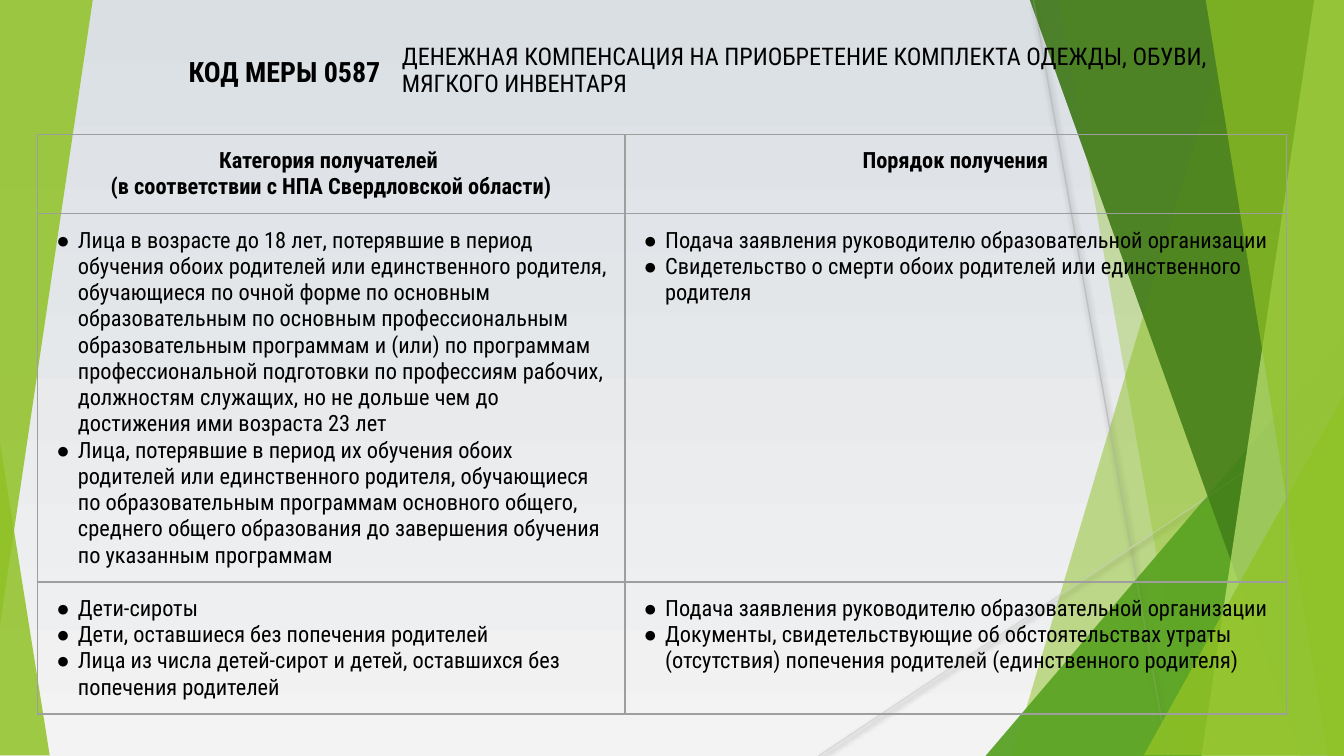
from dataclasses import dataclass

from lxml.etree import SubElement
from pptx import Presentation
from pptx.dml.color import RGBColor
from pptx.enum.shapes import MSO_CONNECTOR as Connector, MSO_SHAPE as Shape
from pptx.enum.text import MSO_ANCHOR as Anchor, PP_ALIGN as Align
from pptx.oxml import parse_xml
from pptx.oxml.ns import nsdecls, qn
from pptx.util import Inches, Pt


@dataclass(frozen=True)
class Theme:
    font: str = "Roboto Condensed"
    bullet_font: str = "Arial"
    text: str = "000000"
    lime: str = "90C226"
    green: str = "54A021"
    forest: str = "3F7819"
    pale: str = "C0E474"
    border: str = "9E9E9E"
    sky_top: str = "DADFE4"
    sky_bottom: str = "F3F3F3"
    ray: str = "BFBFBF"
    soft_ray: str = "D9D9D9"
    code_size: int = 15
    title_size: int = 13
    body_size: int = 12
    line_width: float = 0.75


THEME = Theme()
WIDTH = 10
HEIGHT = WIDTH * 9 / 16
TOP = -0.01
APPLICATION = "Подача заявления руководителю образовательной организации"
HEADINGS = [
    ["Категория получателей ", "(в соответствии с НПА Свердловской области)"],
    ["Порядок получения"],
]
MEASURES = [
    [
        [
            "Лица в возрасте до 18 лет, потерявшие в период обучения обоих родителей "
            "или единственного родителя, обучающиеся по очной форме по основным "
            "образовательным по основным профессиональным образовательным программам "
            "и (или) по программам профессиональной подготовки по профессиям рабочих, "
            "должностям служащих, но не дольше чем до достижения ими возраста 23 лет",
            "Лица, потерявшие в период их обучения обоих родителей или единственного "
            "родителя, обучающиеся по образовательным программам основного общего, "
            "среднего общего образования до завершения обучения по указанным программам",
        ],
        [APPLICATION, "Свидетельство о смерти обоих родителей или единственного родителя"],
    ],
    [
        [
            "Дети-сироты",
            "Дети, оставшиеся без попечения родителей",
            "Лица из числа детей-сирот и детей, оставшихся без попечения родителей",
        ],
        [
            APPLICATION,
            "Документы, свидетельствующие об обстоятельствах утраты (отсутствия) "
            "попечения родителей (единственного родителя)",
        ],
    ],
]


def rgb(color):
    return RGBColor.from_string(color)


def paint_background(slide):
    fill = slide.background.fill
    fill.gradient()
    fill.gradient_angle = 270
    for stop, color in zip(fill.gradient_stops, (THEME.sky_top, THEME.sky_bottom)):
        stop.color.rgb = rgb(color)


def paint_glass(shape, color, opacity):
    shape.shadow.inherit = False
    shape.fill.solid()
    shape.fill.fore_color.rgb = rgb(color)
    shape.line.fill.background()
    tint = shape.element.spPr.find(qn("a:solidFill")).find(qn("a:srgbClr"))
    SubElement(tint, qn("a:alpha"), val=str(opacity * 1000))


def add_beam(slide, top_x, bottom_x, color, opacity):
    corners = [(WIDTH, TOP), (WIDTH, HEIGHT), (bottom_x, HEIGHT)]
    outline = slide.shapes.build_freeform(Inches(top_x), Inches(TOP))
    outline.add_line_segments([(Inches(x), Inches(y)) for x, y in corners])
    paint_glass(outline.convert_to_shape(), color, opacity)


def add_wedge(slide, box, apex, color, opacity, rotation=0):
    wedge = slide.shapes.add_shape(Shape.ISOSCELES_TRIANGLE, *map(Inches, box))
    wedge.adjustments[0] = apex
    wedge.rotation = rotation
    paint_glass(wedge, color, opacity)


def add_ray(slide, start, end, color):
    ray = slide.shapes.add_connector(Connector.STRAIGHT, *map(Inches, start + end))
    ray.line.color.rgb = rgb(color)
    ray.line.width = Pt(THEME.line_width)
    ray.element.spPr.append(parse_xml(
        f'<a:effectLst {nsdecls("a")}>'
        f'<a:outerShdw blurRad="{Pt(3.1)}" dist="{Pt(1.6)}" dir="5400000" rotWithShape="0">'
        '<a:srgbClr val="000000"><a:alpha val="38000"/></a:srgbClr>'
        '</a:outerShdw></a:effectLst>'
    ))


def add_facets(slide):
    add_beam(slide, 9.21, 7.53, THEME.lime, 30)
    add_beam(slide, 7.88, 8.87, THEME.lime, 20)
    add_wedge(slide, (7.33, 2.5, 2.67, 3.13), 1, THEME.green, 72)
    add_beam(slide, 7.66, 9.68, THEME.forest, 70)
    add_beam(slide, 9.78, 8.94, THEME.pale, 70)
    add_beam(slide, 8.97, 9.88, THEME.lime, 65)
    add_wedge(slide, (8.51, 2.94, 1.49, 2.68), 1, THEME.lime, 80)


def format_text(paragraph, size, bold=False, align=Align.LEFT):
    paragraph.alignment = align
    for run in paragraph.runs:
        run.font.name = THEME.font
        run.font.size = Pt(size)
        run.font.bold = bold
        run.font.color.rgb = rgb(THEME.text)


def add_bullet(paragraph):
    props = paragraph._p.get_or_add_pPr()
    props.set("marL", str(Inches(0.2)))
    props.set("indent", str(Inches(-0.16)))
    color = SubElement(props, qn("a:buClr"))
    SubElement(color, qn("a:srgbClr"), val=THEME.text)
    SubElement(props, qn("a:buFont"), typeface=THEME.bullet_font)
    SubElement(props, qn("a:buChar"), char="●")


def add_caption(slide, box, text, size, insets, bold=False, align=Align.LEFT, spacing=None):
    frame = slide.shapes.add_textbox(*map(Inches, box)).text_frame
    frame.word_wrap = True
    frame.vertical_anchor = Anchor.MIDDLE
    frame.margin_left = frame.margin_right = Inches(insets[0])
    frame.margin_top = frame.margin_bottom = Inches(insets[1])
    frame.text = text
    caption = frame.paragraphs[0]
    caption.line_spacing = spacing
    format_text(caption, size, bold, align)


def add_borders(cell):
    props = cell._tc.get_or_add_tcPr()
    for position, side in enumerate(("lnL", "lnR", "lnT", "lnB")):
        props.insert(position, parse_xml(
            f'<a:{side} {nsdecls("a")} w="{Pt(THEME.line_width)}">'
            f'<a:solidFill><a:srgbClr val="{THEME.border}"/></a:solidFill></a:{side}>'
        ))


def fill_cell(cell, lines, heading):
    cell.fill.background()
    add_borders(cell)
    cell.margin_left = cell.margin_right = Inches(0.1)
    cell.margin_top = cell.margin_bottom = Inches(0.1)
    cell.text_frame.text = "\n".join(lines)
    for paragraph in cell.text_frame.paragraphs:
        if not heading:
            add_bullet(paragraph)
        format_text(paragraph, THEME.body_size, heading, Align.CENTER if heading else Align.LEFT)


def add_measures_table(slide):
    widths, heights = (4.37, 4.92), (0.59, 2.74, 0.98)
    box = (0.28, 1, sum(widths), sum(heights))
    table = slide.shapes.add_table(len(heights), len(widths), *map(Inches, box)).table
    table.first_row = table.horz_banding = False
    for column, width in zip(table.columns, widths):
        column.width = Inches(width)
    for index, (height, contents) in enumerate(zip(heights, [HEADINGS, *MEASURES])):
        table.rows[index].height = Inches(height)
        for cell, lines in zip(table.rows[index].cells, contents):
            fill_cell(cell, lines, heading=index == 0)


def main():
    deck = Presentation()
    deck.slide_width, deck.slide_height = Inches(WIDTH), Inches(HEIGHT)
    slide = deck.slides.add_slide(deck.slide_layouts[6])
    paint_background(slide)
    add_facets(slide)
    add_wedge(slide, (0, 3.29, 0.37, 2.33), 0, THEME.lime, 85)
    add_ray(slide, (7.69, 0), (8.69, HEIGHT), THEME.ray)
    add_ray(slide, (10, 3.02), (6.09, HEIGHT), THEME.soft_ray)
    add_facets(slide)
    add_wedge(slide, (0, 0, 0.69, 4.65), 1, THEME.lime, 85, rotation=180)
    add_measures_table(slide)
    add_caption(slide, (2.92, 0.25, 6.3, 0.56),
                "ДЕНЕЖНАЯ КОМПЕНСАЦИЯ НА ПРИОБРЕТЕНИЕ КОМПЛЕКТА ОДЕЖДЫ, ОБУВИ, МЯГКОГО ИНВЕНТАРЯ",
                THEME.title_size, (0.07, 0.04), spacing=0.9)
    add_caption(slide, (0.82, 0.25, 2.11, 0.56), "КОД МЕРЫ 0587",
                THEME.code_size, (0.1, 0.1), bold=True, align=Align.RIGHT)
    deck.save("out.pptx")


if __name__ == "__main__":
    main()
